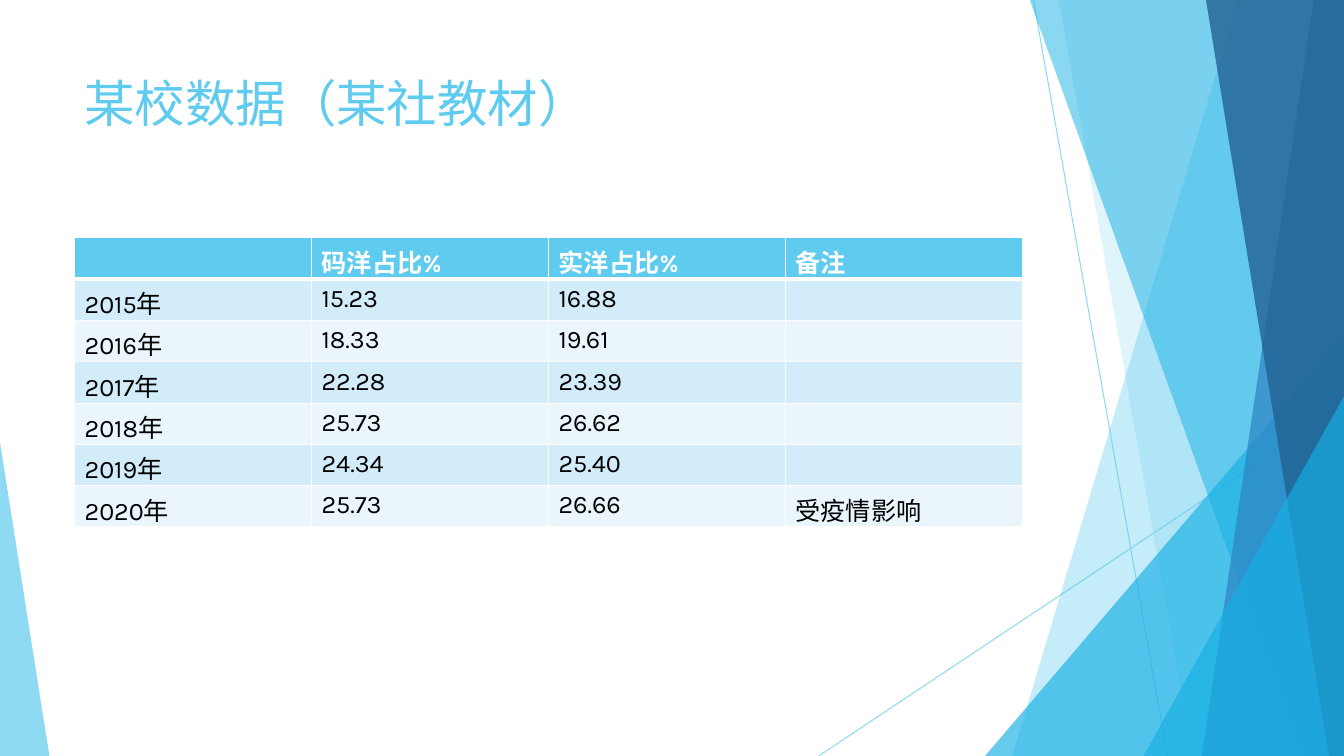
import pptx
import pptx.util
import pptx.dml.color
import pptx.enum.shapes
import pptx.enum.text
import pptx.oxml.ns
import lxml.etree

Inches = pptx.util.Inches
Pt = pptx.util.Pt
RGB = pptx.dml.color.RGBColor.from_string
qn = pptx.oxml.ns.qn

theme = {
    "font": "Karla",
    "title_size": Pt(36),
    "table_size": Pt(18),
    "sky": "5FCBEF",
    "cyan": "17B0E4",
    "blue": "2E83C3",
    "navy": "226292",
    "band_dark": "D2ECF9",
    "band_light": "EAF6FC",
    "white": "FFFFFF",
    "black": "000000",
}


def paint(fill, color, opacity):
    fill.solid()
    fill.fore_color.rgb = RGB(theme[color])
    color_node = fill._xPr.find(".//" + qn("a:srgbClr"))
    lxml.etree.SubElement(color_node, qn("a:alpha"), val=str(opacity * 1000))


def write(paragraph, text, color, size, bold=False):
    run = paragraph.add_run()
    run.text = text
    run.font.color.rgb = RGB(theme[color])
    for key, value in {"name": theme["font"], "size": theme[size], "bold": bold}.items():
        setattr(run.font, key, value)


deck = pptx.Presentation()
deck.slide_width = Inches(13.33)
deck.slide_height = Inches(7.5)
slide = deck.slides.add_slide(deck.slide_layouts[6])
shapes = slide.shapes

for x1, y1, x2, y2 in [(10.25, 0, 11.58, 7.5), (13.33, 4.03, 8.12, 7.5)]:
    ray = shapes.add_connector(
        pptx.enum.shapes.MSO_CONNECTOR.STRAIGHT,
        Inches(x1), Inches(y1), Inches(x2), Inches(y2),
    )
    ray.line.width = Pt(0.75)
    paint(ray.line.fill, "sky", 70)
    lxml.etree.SubElement(ray._element.spPr, qn("a:effectLst"))

facets = [
    ("blade", (12.28, 10.04), "sky", 36),
    ("blade", (10.5, 11.83), "sky", 20),
    ("triangle", (9.77, 3.33, 3.56, 4.17, 1), "cyan", 66),
    ("blade", (10.21, 12.91), "cyan", 50),
    ("blade", (13.03, 11.92), "blue", 70),
    ("blade", (11.96, 13.18), "navy", 80),
    ("triangle", (11.34, 3.93, 1.99, 3.57, 1), "cyan", 66),
    ("triangle", (0, 4.39, 0.49, 3.11, 0), "sky", 70),
]
for outline, geometry, color, opacity in facets:
    if outline == "blade":
        top_x, bottom_x = geometry
        builder = shapes.build_freeform(Inches(top_x), Inches(-0.01), scale=1.0)
        corners = [(13.33, -0.01), (13.33, 7.5), (bottom_x, 7.5)]
        builder.add_line_segments([(Inches(x), Inches(y)) for x, y in corners], close=True)
        facet = builder.convert_to_shape()
    else:
        *box, apex = geometry
        facet = shapes.add_shape(
            pptx.enum.shapes.MSO_SHAPE.ISOSCELES_TRIANGLE, *[Inches(v) for v in box]
        )
        facet.adjustments[0] = apex
    facet.shadow.inherit = False
    facet.line.fill.background()
    paint(facet.fill, color, opacity)

title = shapes.add_textbox(Inches(0.74), Inches(0.67), Inches(9.4), Inches(1.44))
title.text_frame.word_wrap = True
title.text_frame.vertical_anchor = pptx.enum.text.MSO_ANCHOR.TOP
write(title.text_frame.paragraphs[0], "某校数据（某社教材）", "sky", "title_size")

share_rows = [
    ("", "码洋占比%", "实洋占比%", "备注"),
    ("2015年", "15.23", "16.88", ""),
    ("2016年", "18.33", "19.61", ""),
    ("2017年", "22.28", "23.39", ""),
    ("2018年", "25.73", "26.62", ""),
    ("2019年", "24.34", "25.40", ""),
    ("2020年", "25.73", "26.66", "受疫情影响"),
]
share_table = shapes.add_table(
    len(share_rows), 4, Inches(0.74), Inches(2.36), Inches(9.4), Inches(2.84)
).table
for column in share_table.columns:
    column.width = Inches(2.35)
for row_index, values in enumerate(share_rows):
    share_table.rows[row_index].height = Inches(0.41)
    header = row_index == 0
    band = "sky" if header else ("band_dark" if row_index % 2 else "band_light")
    for column_index, value in enumerate(values):
        cell = share_table.cell(row_index, column_index)
        if value:
            write(cell.text_frame.paragraphs[0], value,
                  "white" if header else "black", "table_size", header)
        properties = cell._tc.get_or_add_tcPr()
        for side in ("L", "R", "T", "B"):
            thick = (header and side == "B") or (row_index == 1 and side == "T")
            border = lxml.etree.SubElement(
                properties, qn("a:ln" + side), w=str(Pt(3 if thick else 1))
            )
            stroke = lxml.etree.SubElement(border, qn("a:solidFill"))
            lxml.etree.SubElement(stroke, qn("a:srgbClr"), val=theme["white"])
        cell.fill.solid()
        cell.fill.fore_color.rgb = RGB(theme[band])

deck.save("out.pptx")
